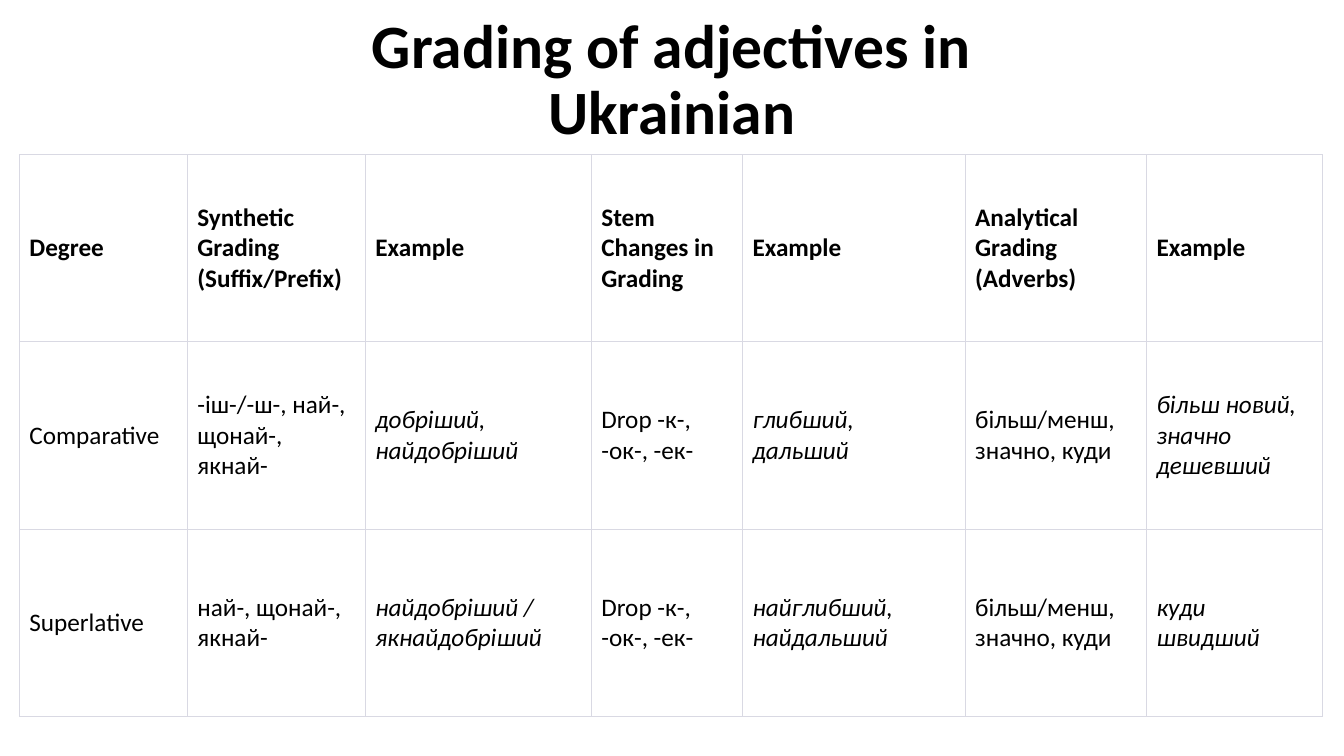
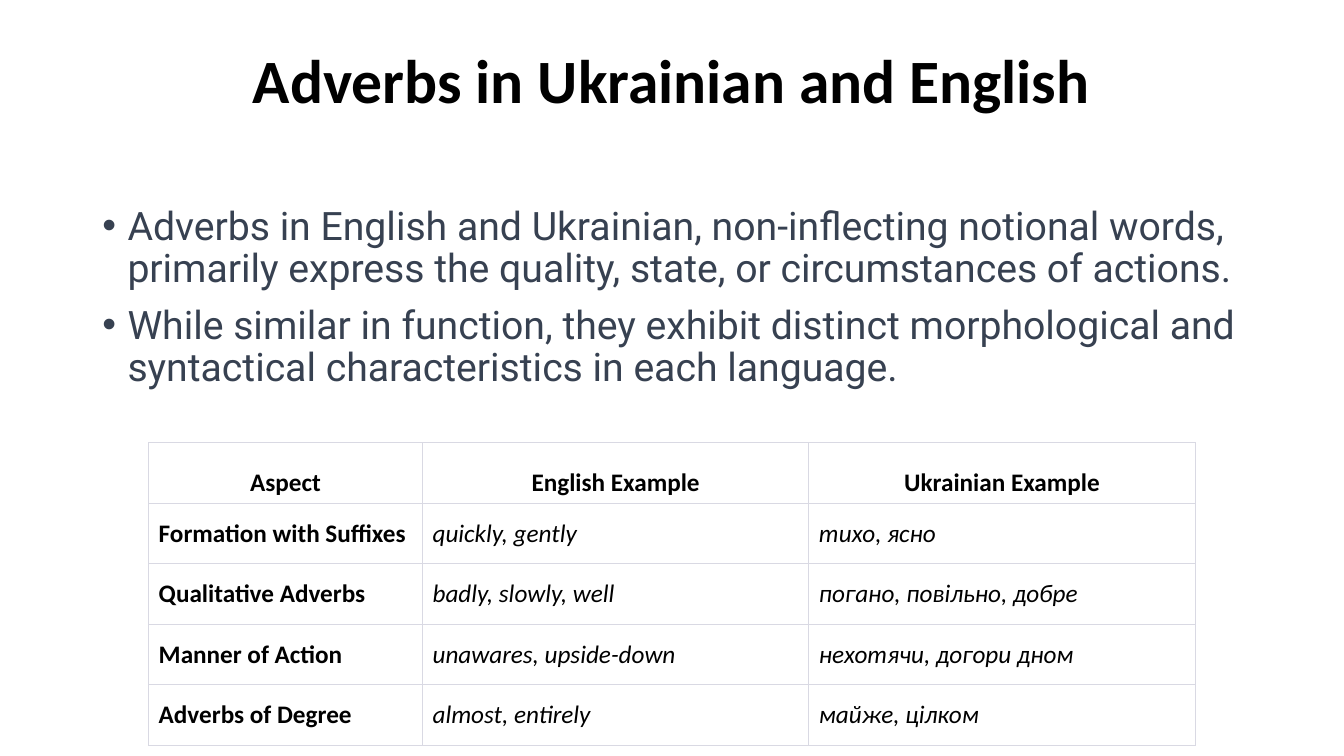
from dataclasses import dataclass

from lxml import etree
from pptx import Presentation
from pptx.dml.color import RGBColor
from pptx.enum.text import MSO_ANCHOR, PP_ALIGN
from pptx.oxml.ns import qn
from pptx.util import Inches, Pt

CENTER, LEFT = PP_ALIGN.CENTER, PP_ALIGN.LEFT
TOP, MIDDLE, BOTTOM = MSO_ANCHOR.TOP, MSO_ANCHOR.MIDDLE, MSO_ANCHOR.BOTTOM
GRID_COLUMNS, GRID_ROWS = 160, 90
BLANK_LAYOUT = 6


@dataclass(frozen=True)
class Theme:
    heading_font: str = "Calibri"
    body_font: str = "Roboto"
    ink: str = "000000"
    body_ink: str = "374151"
    rule: str = "D9D9E3"
    background: str = "FFFFFF"
    title_size: int = 44
    body_size: int = 28
    table_size: int = 18
    thin_rule: float = 0.75
    row_rule: float = 1
    bullet_indent: float = 0.25
    line_spacing: float = 0.9
    paragraph_gap: int = 10


def set_attributes(target, values):
    for name, value in values.items():
        setattr(target, name, value)


class Deck:
    """Draws elements on the current slide; lengths are grid columns and rows."""

    def __init__(self, theme):
        self.theme = theme
        self.presentation = Presentation()
        set_attributes(self.presentation, {"slide_width": Inches(13.333),
                                           "slide_height": Inches(7.5)})
        self.slide = None

    def new_slide(self):
        layout = self.presentation.slide_layouts[BLANK_LAYOUT]
        self.slide = self.presentation.slides.add_slide(layout)
        fill = self.slide.background.fill
        fill.solid()
        fill.fore_color.rgb = RGBColor.from_string(self.theme.background)

    def across(self, columns):
        return round(self.presentation.slide_width * columns / GRID_COLUMNS)

    def down(self, rows):
        return round(self.presentation.slide_height * rows / GRID_ROWS)

    def box(self, left, top, width, height):
        return self.across(left), self.down(top), self.across(width), self.down(height)

    def text_frame(self, area, anchor):
        frame = self.slide.shapes.add_textbox(*self.box(*area)).text_frame
        set_attributes(frame, {"word_wrap": True, "vertical_anchor": anchor})
        return frame

    def set_text(self, paragraph, text, color, paragraph_format, **font_format):
        set_attributes(paragraph, paragraph_format)
        run = paragraph.add_run()
        run.text = text
        set_attributes(run.font, font_format)
        run.font.color.rgb = RGBColor.from_string(color)

    def title(self, text, area):
        theme = self.theme
        frame = self.text_frame(area, MIDDLE)
        self.set_text(frame.paragraphs[0], text, theme.ink,
                      {"alignment": CENTER, "line_spacing": theme.line_spacing},
                      name=theme.heading_font, size=Pt(theme.title_size), bold=True)

    def bullets(self, texts, area):
        theme = self.theme
        frame = self.text_frame(area, TOP)
        indent = Inches(theme.bullet_indent)
        for index, text in enumerate(texts):
            paragraph = frame.add_paragraph() if index else frame.paragraphs[0]
            self.set_text(paragraph, text, theme.body_ink,
                          {"line_spacing": theme.line_spacing,
                           "space_before": Pt(theme.paragraph_gap)},
                          name=theme.body_font, size=Pt(theme.body_size))
            properties = paragraph._p.get_or_add_pPr()
            properties.set("marL", str(indent))
            properties.set("indent", str(-indent))
            etree.SubElement(properties, qn("a:buFont"), typeface="Arial")
            etree.SubElement(properties, qn("a:buChar"), char="•")

    def borders(self, cell, top, bottom):
        """Rule all four sides; top and bottom are widths in points."""
        side = self.theme.thin_rule
        properties = cell._tc.get_or_add_tcPr()
        widths = {"a:lnL": side, "a:lnR": side, "a:lnT": top, "a:lnB": bottom}
        for index, (tag, width) in enumerate(widths.items()):
            line = etree.Element(qn(tag), w=str(Pt(width)))
            fill = etree.SubElement(line, qn("a:solidFill"))
            etree.SubElement(fill, qn("a:srgbClr"), val=self.theme.rule)
            properties.insert(index, line)

    def table(self, rows, left, top, widths, heights, italic_columns,
              bold_columns=(), header_alignment=LEFT, header_anchor=MIDDLE):
        theme = self.theme
        area = self.box(left, top, sum(widths), sum(heights))
        table = self.slide.shapes.add_table(len(rows), len(widths), *area).table
        set_attributes(table, {"first_row": False, "horz_banding": False})
        for column, width in zip(table.columns, widths):
            column.width = self.across(width)
        for row, height in zip(table.rows, heights):
            row.height = self.down(height)
        last = len(rows) - 1
        for row_index, texts in enumerate(rows):
            header = row_index == 0
            for column_index, text in enumerate(texts):
                cell = table.cell(row_index, column_index)
                cell.fill.background()
                cell.vertical_anchor = header_anchor if header else MIDDLE
                self.borders(cell,
                             theme.thin_rule if header else theme.row_rule,
                             theme.thin_rule if row_index == last else theme.row_rule)
                self.set_text(cell.text_frame.paragraphs[0], text, theme.ink,
                              {"alignment": header_alignment if header else LEFT},
                              name=theme.heading_font, size=Pt(theme.table_size),
                              bold=header or column_index in bold_columns,
                              italic=not header and column_index in italic_columns)


def adjectives_slide(deck):
    deck.new_slide()
    deck.title("Grading of adjectives in Ukrainian", (28.9, 1, 102.2, 17.4))
    deck.table(
        [["Degree", "Synthetic Grading (Suffix/Prefix)", "Example",
          "Stem Changes in Grading", "Example",
          "Analytical Grading (Adverbs)", "Example"],
         ["Comparative", "-іш-/-ш-, най-, щонай-, якнай-", "добріший, найдобріший",
          "Drop -к-, -ок-, -ек-", "глибший, дальший",
          "більш/менш, значно, куди", "більш новий, значно дешевший"],
         ["Superlative", "най-, щонай-, якнай-", "найдобріший / якнайдобріший",
          "Drop -к-, -ок-, -ек-", "найглибший, найдальший",
          "більш/менш, значно, куди", "куди швидший"]],
        left=2.3, top=18.4,
        widths=[20, 21.2, 26.9, 18, 26.5, 21.6, 20.9], heights=[22.3] * 3,
        italic_columns=(2, 4, 6))


def adverbs_slide(deck):
    deck.new_slide()
    deck.title("Adverbs in Ukrainian and English", (11, 1.3, 138, 17.4))
    deck.bullets(
        ["Adverbs in English and Ukrainian, non-inflecting notional words, "
         "primarily express the quality, state, or circumstances of actions.",
         "While similar in function, they exhibit distinct morphological and "
         "syntactical characteristics in each language."],
        (11, 24, 138, 57))
    deck.table(
        [["Aspect", "English Example", "Ukrainian Example"],
         ["Formation with Suffixes", "quickly, gently", "тихо, ясно"],
         ["Qualitative Adverbs", "badly, slowly, well", "погано, повільно, добре"],
         ["Manner of Action", "unawares, upside-down", "нехотячи, догори дном"],
         ["Adverbs of Degree", "almost, entirely", "майже, цілком"]],
        left=17.7, top=52.7, widths=[32.6, 46, 46], heights=[7.2] * 5,
        italic_columns=(1, 2), bold_columns=(0,),
        header_alignment=CENTER, header_anchor=BOTTOM)


def main():
    deck = Deck(Theme())
    adjectives_slide(deck)
    adverbs_slide(deck)
    deck.presentation.save("out.pptx")


if __name__ == "__main__":
    main()
